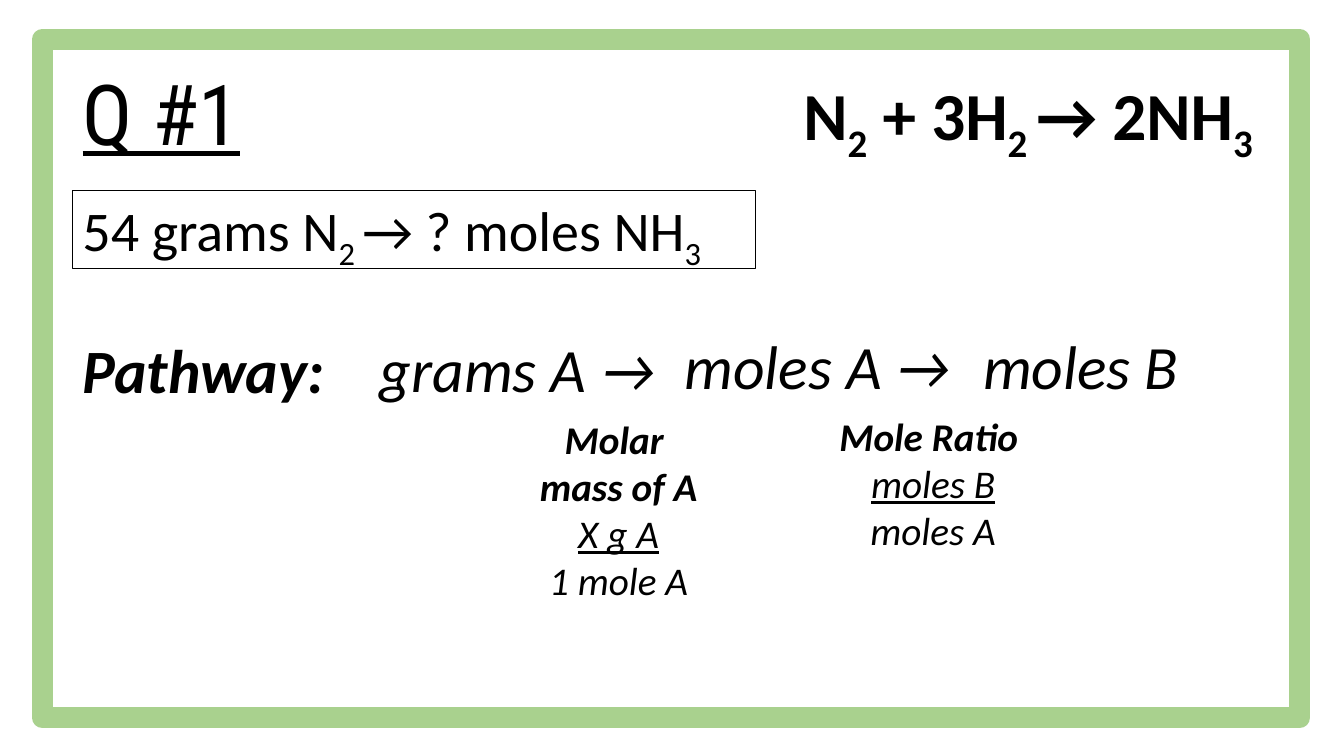
"""Build a stoichiometry question slide with its solution pathway."""
import pptx
import pptx.util
import pptx.dml.color
import pptx.enum.shapes
import pptx.enum.text

WIDTH = pptx.util.Inches(13.333)
HEIGHT = pptx.util.Inches(7.5)
ALIGN = pptx.enum.text.PP_ALIGN
ANCHOR = pptx.enum.text.MSO_ANCHOR


def area(left, top, width, height):
    """Turn percentages of the slide into lengths."""
    return (int(WIDTH * left / 100), int(HEIGHT * top / 100),
            int(WIDTH * width / 100), int(HEIGHT * height / 100))


def color(code):
    """Read a hex colour."""
    return pptx.dml.color.RGBColor.from_string(code)


def write(shape, lines, size, font="Calibri", align=ALIGN.CENTER,
          anchor=ANCHOR.TOP, wrap=True):
    """Write lines of (text, style) runs; styles are b, i, u and s for subscript."""
    frame = shape.text_frame
    frame.word_wrap = wrap
    frame.vertical_anchor = anchor
    for row, runs in enumerate(lines):
        para = frame.add_paragraph() if row else frame.paragraphs[0]
        para.alignment = align
        for text, style in runs:
            run = para.add_run()
            run.text = text
            run.font.name = font
            run.font.size = pptx.util.Pt(size)
            run.font.color.rgb = color("000000")
            run.font.bold = "b" in style
            run.font.italic = "i" in style
            run.font.underline = "u" in style
            if "s" in style:
                run._r.get_or_add_rPr().set("baseline", "-25000")


def panel(slide, place, fill=None, line=None, weight=0):
    """Add a rectangle with an optional fill and outline."""
    shape = slide.shapes.add_shape(
        pptx.enum.shapes.MSO_SHAPE.RECTANGLE, *area(*place))
    shape.shadow.inherit = False
    if fill:
        shape.fill.solid()
        shape.fill.fore_color.rgb = color(fill)
    else:
        shape.fill.background()
    if line:
        shape.line.color.rgb = color(line)
        shape.line.width = pptx.util.Pt(weight)
    else:
        shape.line.fill.background()
    return shape


def label(slide, place, lines, size, wrap=True):
    """Add a centred text box."""
    box = slide.shapes.add_textbox(*area(*place))
    write(box, lines, size, wrap=wrap)


def head(slide, text):
    """Place the title above the frame."""
    title = slide.shapes.title
    slide.shapes._spTree.append(title._element)
    title.left, title.top, title.width, title.height = area(5.4, 9.07, 40, 13.2)
    write(title, [[(text, "u")]], 60, "Roboto Condensed", ALIGN.LEFT, ANCHOR.BOTTOM)
    title.text_frame.paragraphs[0].line_spacing = 0.9


def main():
    """Assemble and save the slide."""
    deck = pptx.Presentation()
    deck.slide_width, deck.slide_height = WIDTH, HEIGHT
    slide = deck.slides.add_slide(deck.slide_layouts[5])

    panel(slide, (3.15, 5.2, 93.55, 89.73), "FFFFFF", "A9D18E", 15)
    head(slide, "Q #1")
    label(slide, (54, 9.07, 45, 12.13), [[
        ("N", "b"), ("2", "bs"), (" + 3H", "b"), ("2 ", "bs"),
        ("→ 2NH", "b"), ("3", "bs")]], 48)

    ask = panel(slide, (5.4, 25.2, 50.79, 10.27), line="000000", weight=0.75)
    write(ask, [[("54 grams N", ""), ("2 ", "s"), ("→ ? moles NH", ""),
                 ("3", "s")]], 40, align=ALIGN.LEFT)

    band = panel(slide, (5.4, 39.73, 83.5, 18.13), "FFFFFF")
    write(band, [[("Pathway:", "bi")]], 44, align=ALIGN.LEFT, anchor=ANCHOR.MIDDLE)

    for text, left, top, width in (("grams A →", 27.23, 43.07, 22.66),
                                   ("moles A →", 49.89, 42.67, 21.98),
                                   ("moles B", 72.32, 42.67, 16.2)):
        label(slide, (left, top, width, 11.2), [[(text, "i")]], 44, False)

    label(slide, (36.46, 54.27, 19.13, 26.53), [
        [("Molar ", "bi")], [("mass of A", "bi")],
        [("X g A", "iu")], [("1 mole A", "i")]], 28)
    label(slide, (61.59, 53.87, 15.68, 20.13), [
        [("Mole Ratio ", "bi")], [("moles B", "iu")], [("moles A", "i")]], 28, False)

    deck.save("out.pptx")


if __name__ == "__main__":
    main()
